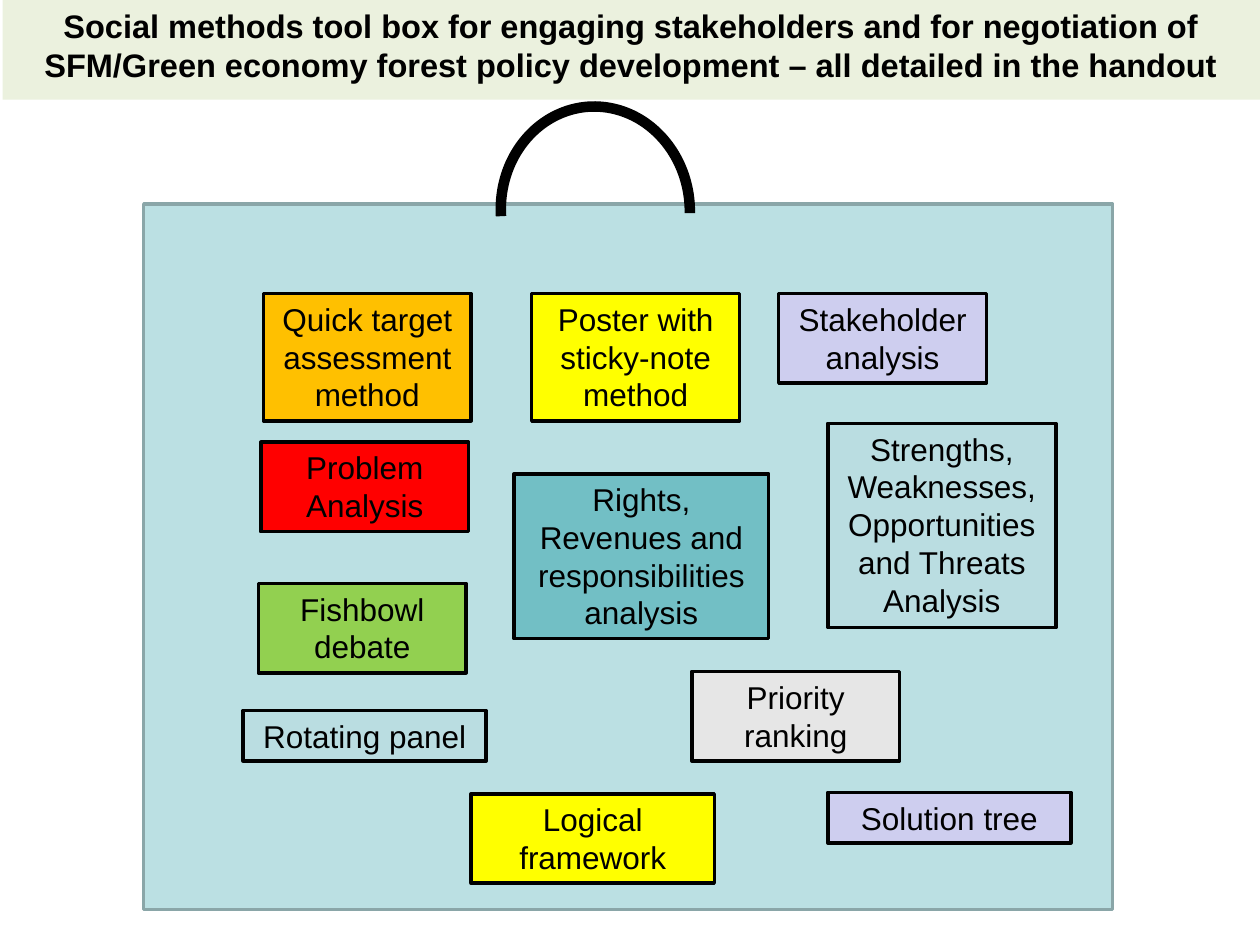
from pptx import Presentation
from pptx.dml.color import RGBColor
from pptx.enum.shapes import MSO_SHAPE
from pptx.enum.text import MSO_ANCHOR, MSO_AUTO_SIZE, PP_ALIGN
from pptx.util import Inches, Pt

RECTANGLE, ARC = MSO_SHAPE.RECTANGLE, MSO_SHAPE.ARC
TOP, CENTER = MSO_ANCHOR.TOP, PP_ALIGN.CENTER
NO_FIT, GROW = MSO_AUTO_SIZE.NONE, MSO_AUTO_SIZE.SHAPE_TO_FIT_TEXT
BLACK = "000000"

TITLE = ("Social methods tool box for engaging stakeholders and for negotiation of "
         "SFM/Green economy forest policy development – all detailed in the handout")

# Box height by number of text lines
HEIGHTS = {1: 0.4, 2: 0.71, 3: 1.01, 4: 1.31, 5: 1.62}

# text, left, top, width, text lines, fill
METHODS = [
    ("Quick target assessment method", 2.09, 2.33, 1.65, 3, "FFC000"),
    ("Poster with sticky-note method", 4.22, 2.33, 1.65, 3, "FFFF00"),
    ("Stakeholder\nanalysis", 6.18, 2.33, 1.65, 2, "CECEEF"),
    ("Problem Analysis", 2.07, 3.51, 1.65, 2, "FF0000"),
    ("Rights, Revenues and responsibilities analysis", 4.08, 3.76, 2.02, 4, "72BFC5"),
    ("Strengths, Weaknesses, Opportunities and Threats Analysis",
     6.57, 3.36, 1.81, 5, "BADDE1"),
    ("Fishbowl debate", 2.05, 4.63, 1.65, 2, "92D050"),
    ("Priority ranking", 5.49, 5.33, 1.65, 2, "E6E6E6"),
    ("Solution tree", 6.57, 6.29, 1.93, 1, "CECEEF"),
    ("Logical framework", 3.74, 6.3, 1.93, 2, "FFFF00"),
    ("Rotating panel", 1.93, 5.64, 1.93, 1, "BADDE1"),
]


def color(hex_value):
    return RGBColor.from_string(hex_value)


def add_shape(slide, kind, left, top, width, height, fill=None, line=None, line_width=2):
    shape = slide.shapes.add_shape(
        kind, Inches(left), Inches(top), Inches(width), Inches(height))
    shape.shadow.inherit = False
    if fill:
        shape.fill.solid()
        shape.fill.fore_color.rgb = color(fill)
    else:
        shape.fill.background()
    if line:
        shape.line.color.rgb = color(line)
        shape.line.width = Pt(line_width)
    else:
        shape.line.fill.background()
    return shape


def write_text(shape, text, size=18, bold=False, fit=NO_FIT):
    frame = shape.text_frame
    frame.word_wrap = True
    frame.auto_size = fit
    frame.vertical_anchor = TOP
    paragraph = frame.paragraphs[0]
    paragraph.text = text
    paragraph.alignment = CENTER
    for run in paragraph.runs:
        run.font.name = "Arial"
        run.font.size = Pt(size)
        run.font.bold = bold
        run.font.color.rgb = color(BLACK)


def main():
    presentation = Presentation()
    presentation.slide_width = Inches(10)
    presentation.slide_height = Inches(7.5)
    slide = presentation.slides.add_slide(presentation.slide_layouts[6])

    add_shape(slide, RECTANGLE, 1.14, 1.62, 7.69, 5.6, fill="BBE0E3", line="8AA6A8")

    handle = add_shape(slide, ARC, 3.9, 0.92, 1.65, 1.5, line=BLACK, line_width=6)
    handle.rotation = 266.5
    handle.adjustments[0] = 162
    handle.adjustments[1] = 57.07

    for text, left, top, width, lines, fill in METHODS:
        box = add_shape(slide, RECTANGLE, left, top, width, HEIGHTS[lines],
                        fill=fill, line=BLACK)
        write_text(box, text, fit=GROW)

    banner = add_shape(slide, RECTANGLE, 0.02, 0, 9.98, 0.79, fill="EBF1DE")
    write_text(banner, TITLE, size=18.6, bold=True)

    presentation.save("out.pptx")


if __name__ == "__main__":
    main()
